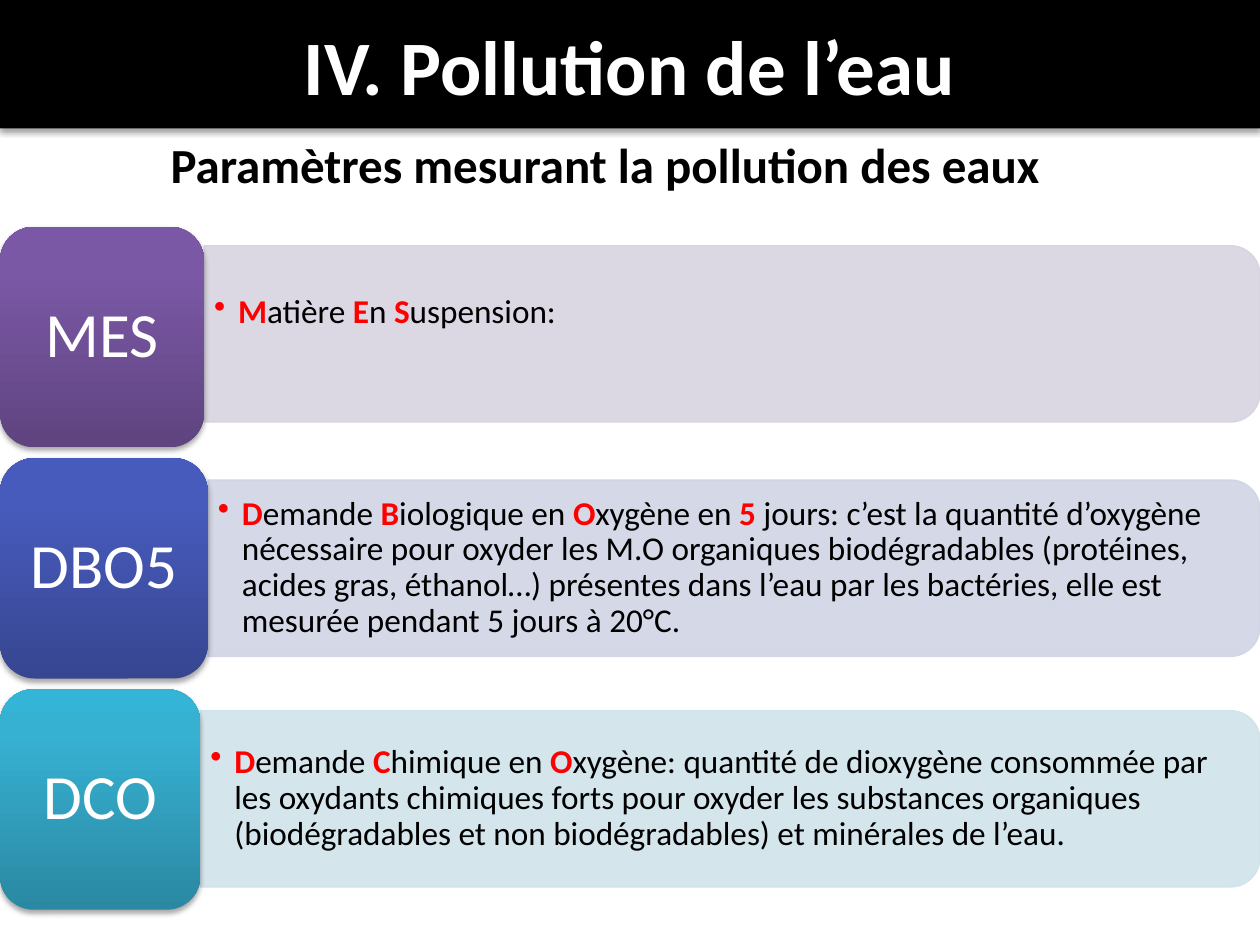
from copy import deepcopy

from lxml.etree import SubElement
from pptx import Presentation
from pptx.dml.color import RGBColor
from pptx.enum.shapes import MSO_SHAPE as Preset
from pptx.enum.text import MSO_ANCHOR as Anchor, PP_ALIGN as Align
from pptx.oxml.ns import qn
from pptx.util import Inches, Pt

COLORS = {"black": "000000", "white": "FFFFFF", "initial": "FF0000"}

# Label, label width, bar middle, bar colour, gradient from bottom to top,
# blank depth under the text, definition (initials between asterisks)
PARAMETERS = [
    ("MES", 1.62, 2.65, "D8D3E0", ("5F4480", "7B58A6", "7C57A8"), 0.33,
     "*M*atière *E*n *S*uspension:"),
    ("DBO5", 1.65, 4.51, "D1D4E5", ("374691", "475BBC", "455ABF"), 0,
     "*D*emande *B*iologique en *O*xygène en *5* jours: c’est la quantité "
     "d’oxygène nécessaire pour oxyder les M.O organiques biodégradables "
     "(protéines, acides gras, éthanol…) présentes dans l’eau par les "
     "bactéries, elle est mesurée pendant 5 jours à 20°C."),
    ("DCO", 1.59, 6.34, "D0E3EA", ("2A88A2", "37B1D2", "34B4D6"), 0,
     "*D*emande *C*himique en *O*xygène: quantité de dioxygène consommée par "
     "les oxydants chimiques forts pour oxyder les substances organiques "
     "(biodégradables et non biodégradables) et minérales de l’eau."),
]
SLIDE_WIDTH = 10
FIRST_LABEL_TOP, LABEL_STEP, LABEL_HEIGHT = 1.8, 1.835, 1.75
LABEL_INSET = 0.08
BAR_HEIGHT, DEFINITION_HEIGHT, BAR_MARGIN = 1.4, 1.26, 0.07


def rgb(value):
    return RGBColor.from_string(value)


def add_alpha(color, percent):
    SubElement(color, qn("a:alpha"), val=str(percent * 1000))


def add_shadow(shape):
    shape.shadow.inherit = False
    effects = shape.element.spPr.find(qn("a:effectLst"))
    outer = SubElement(effects, qn("a:outerShdw"), blurRad=str(Pt(3.1)),
                       dist=str(Pt(1.8)), dir="5400000", rotWithShape="0")
    add_alpha(SubElement(outer, qn("a:srgbClr"), val=COLORS["black"]), 35)


def format_frame(frame, anchor, insets=(0.1, 0.05, 0.1, 0.05)):
    left, top, right, bottom = map(Inches, insets)
    settings = {"word_wrap": True, "vertical_anchor": anchor,
                "margin_left": left, "margin_top": top,
                "margin_right": right, "margin_bottom": bottom}
    for name, value in settings.items():
        setattr(frame, name, value)
    return frame.paragraphs[0]


def add_run(paragraph, text, size, color, bold=False):
    run = paragraph.add_run()
    run.text = text
    for name, value in {"name": "Calibri", "size": Pt(size), "bold": bold}.items():
        setattr(run.font, name, value)
    run.font.color.rgb = rgb(COLORS[color])


def add_heading(slide):
    banner = slide.shapes.add_shape(
        Preset.RECTANGLE, 0, 0, Inches(SLIDE_WIDTH), Inches(1.02))
    banner.fill.solid()
    banner.fill.fore_color.rgb = rgb(COLORS["black"])
    banner.line.fill.background()
    add_shadow(banner)
    subtitle = slide.shapes.add_textbox(
        Inches(1.25), Inches(1.02), Inches(7.19), Inches(0.57))
    for box, anchor, text, size, color in (
            (banner, Anchor.MIDDLE, "IV. Pollution de l’eau", 44, "white"),
            (subtitle, Anchor.TOP,
             "Paramètres mesurant la pollution des eaux ", 28, "black")):
        paragraph = format_frame(box.text_frame, anchor)
        paragraph.alignment = Align.CENTER
        add_run(paragraph, text, size, color, bold=True)


def add_bar(slide, left, middle, color):
    # The upright shape is turned so that its round corners face right
    length = SLIDE_WIDTH - left
    bar = slide.shapes.add_shape(
        Preset.ROUND_2_SAME_RECTANGLE,
        Inches(left + length / 2 - BAR_HEIGHT / 2), Inches(middle - length / 2),
        Inches(BAR_HEIGHT), Inches(length))
    bar.rotation = 90
    bar.shadow.inherit = False
    bar.line.width = Pt(0.75)
    for fill in (bar.fill, bar.line.fill):
        fill.solid()
        fill.fore_color.rgb = rgb(color)
    for tint in bar.element.spPr.iter(qn("a:srgbClr")):
        add_alpha(tint, 90)


def add_definition(slide, left, middle, text, blank_depth):
    box = slide.shapes.add_textbox(
        Inches(left), Inches(middle - DEFINITION_HEIGHT / 2),
        Inches(SLIDE_WIDTH - left - BAR_MARGIN), Inches(DEFINITION_HEIGHT))
    paragraph = format_frame(box.text_frame, Anchor.MIDDLE,
                             (0.08, 0.04, 0.08, 0.04 + blank_depth))
    paragraph.level = 1
    paragraph.line_spacing = 0.9
    properties = paragraph._p.get_or_add_pPr()
    properties.set("marL", str(Inches(0.19)))
    properties.set("indent", str(Inches(-0.19)))
    SubElement(properties, qn("a:buChar"), char="•")
    for index, part in enumerate(text.split("*")):
        is_initial = index % 2 == 1
        if part:
            add_run(paragraph, part, 19,
                    "initial" if is_initial else "black", is_initial)


def add_label(slide, top, width, text, gradient):
    tile = slide.shapes.add_shape(
        Preset.ROUNDED_RECTANGLE, 0, Inches(top), Inches(width), Inches(LABEL_HEIGHT))
    tile.line.fill.background()
    tile.fill.gradient()
    tile.fill.gradient_angle = 90
    stop_list = tile.element.spPr.find(".//" + qn("a:gsLst"))
    stop_list.append(deepcopy(stop_list[0]))
    for stop, position, color in zip(tile.fill.gradient_stops, (0, 0.8, 1), gradient):
        stop.position = position
        stop.color.rgb = rgb(color)
    add_shadow(tile)

    caption = slide.shapes.add_textbox(
        Inches(LABEL_INSET), Inches(top + LABEL_INSET),
        Inches(width - 2 * LABEL_INSET), Inches(LABEL_HEIGHT - 2 * LABEL_INSET))
    paragraph = format_frame(caption.text_frame, Anchor.MIDDLE,
                             (0.15, 0.07, 0.15, 0.07))
    paragraph.alignment = Align.CENTER
    paragraph.line_spacing = 0.9
    add_run(paragraph, text, 36, "white")


def main():
    deck = Presentation()
    deck.slide_width, deck.slide_height = Inches(SLIDE_WIDTH), Inches(7.5)
    slide = deck.slides.add_slide(deck.slide_layouts[6])

    # Title banner and subtitle
    add_heading(slide)

    # One row for each pollution parameter
    for row, parameter in enumerate(PARAMETERS):
        label, width, middle, bar_color, gradient, blank_depth, definition = parameter
        add_bar(slide, width, middle, bar_color)
        add_definition(slide, width, middle, definition, blank_depth)
        add_label(slide, FIRST_LABEL_TOP + row * LABEL_STEP, width, label, gradient)

    deck.save("out.pptx")


if __name__ == "__main__":
    main()
